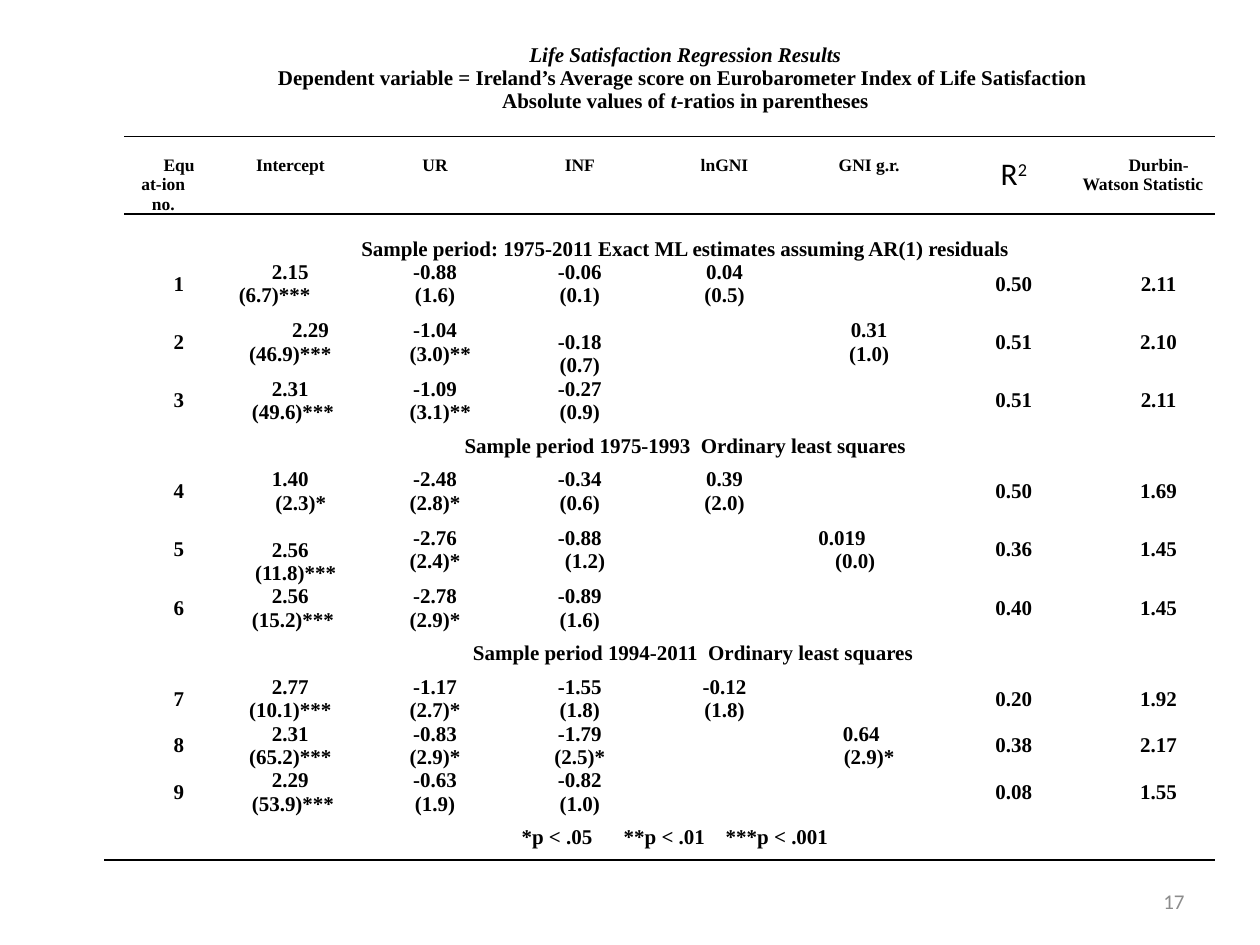
import dataclasses
import typing

import pptx
import pptx.dml.color
import pptx.enum.text
import pptx.oxml
import pptx.oxml.ns
import pptx.util

Pt = pptx.util.Pt
Align = pptx.enum.text.PP_ALIGN
Anchor = pptx.enum.text.MSO_ANCHOR
SERIF, SANS = "Times New Roman", "Calibri"
BLACK, GREY = "000000", "8C8C8C"
PLAIN = "{2D5ABB26-0587-4C30-8999-92F81FD0307C}"
INDENT = 18
WIDTHS = [11.5, 44.6] + [82.7] * 7
LAST = len(WIDTHS) - 1


@dataclasses.dataclass
class Look:
    size: float = 12
    font: str = SERIF
    bold: bool = True
    ital: bool = False
    tint: str = BLACK


@dataclasses.dataclass
class Band:
    row: int
    text: str
    drop: float = 0
    nudge: float = 0


@dataclasses.dataclass
class Model:
    row: int
    cells: typing.List[str]  # from column 1; "|" parts value and t-ratio


HEADS = ["Equat-ion no.", "Intercept", "UR", "INF", "lnGNI", "GNI g.r.",
         "R", "Durbin-Watson Statistic"]
BANDS = [
    Band(2, "Sample period: 1975-2011 Exact ML estimates assuming AR(1) residuals", drop=13.4),
    Band(6, "Sample period 1975-1993  Ordinary least squares"),
    Band(10, "Sample period 1994-2011  Ordinary least squares", nudge=9),
]
MODELS = [
    Model(3, ["1", "2.15\v(6.7)***", "-0.88|(1.6)", "-0.06|(0.1)", "0.04|(0.5)", "", "0.50", "2.11"]),
    Model(4, ["2", "2.29|(46.9)***", "-1.04|(3.0)**", "-0.18|(0.7)", "", "0.31|(1.0)", "0.51", "2.10"]),
    Model(5, ["3", "2.31|(49.6)***", "-1.09|(3.1)**", "-0.27|(0.9)", "", "", "0.51", "2.11"]),
    Model(7, ["4", "1.40|(2.3)*", "-2.48|(2.8)*", "-0.34|(0.6)", "0.39|(2.0)", "", "0.50", "1.69"]),
    Model(8, ["5", "2.56|(11.8)***", "-2.76|(2.4)*", "-0.88|(1.2)", "", "0.019|(0.0)", "0.36", "1.45"]),
    Model(9, ["6", "2.56|(15.2)***", "-2.78|(2.9)*", "-0.89|(1.6)", "", "", "0.40", "1.45"]),
    Model(11, ["7", "2.77|(10.1)***", "-1.17|(2.7)*", "-1.55|(1.8)", "-0.12|(1.8)", "", "0.20", "1.92"]),
    Model(12, ["8", "2.31|(65.2)***", "-0.83|(2.9)*", "-1.79|(2.5)*", "", "0.64|(2.9)*", "0.38", "2.17"]),
    Model(13, ["9", "2.29|(53.9)***", "-0.63|(1.9)", "-0.82|(1.0)", "", "", "0.08", "1.55"]),
]
# Extra first-line indent by (row, column), one number a line
NUDGES = {
    (4, 2): (23, 0), (4, 3): (0, 6), (5, 2): (0, 3), (5, 3): (0, 6),
    (7, 2): (0, 12), (8, 2): (0, 6), (8, 4): (0, 6), (8, 6): (-31, -16),
    (9, 2): (0, 3), (12, 6): (-9, 0), (13, 2): (0, 3),
}
# Cells set one line lower than their row
DROPS = {(4, 4): 13.4, (8, 2): 13.4}


def paint(run, look: Look) -> None:
    font = run.font
    font.size, font.name = Pt(look.size), look.font
    font.bold, font.italic = look.bold, look.ital
    font.color.rgb = pptx.dml.color.RGBColor.from_string(look.tint)


def fill(cell, text: str, look: Look, nudges: typing.Sequence[float] = (),
         drop: float = 0) -> None:
    """Write centred lines, each shifted by an indent or a right margin."""
    cell.text_frame.text = text.replace("|", "\n")
    cell.margin_top = Pt(drop)
    for i, para in enumerate(cell.text_frame.paragraphs):
        para.alignment = Align.CENTER
        shift = INDENT + (nudges[i] if i < len(nudges) else 0)
        props = para._p.get_or_add_pPr()
        props.set("marL", "0")
        props.set("marR", str(int(Pt(max(-shift, 0)))))
        props.set("indent", str(int(Pt(max(shift, 0)))))
        for run in para.runs:
            paint(run, look)


def rule(table, row: int, side: str, first: int = 1) -> None:
    space = pptx.oxml.ns.nsdecls("a")
    for col in range(first, LAST + 1):
        line = pptx.oxml.parse_xml(
            f'<a:ln{side} {space} w="12700"><a:solidFill>'
            f'<a:srgbClr val="{BLACK}"/></a:solidFill></a:ln{side}>')
        table.cell(row, col)._tc.get_or_add_tcPr().insert(0, line)


def grid(slide):
    frame = slide.shapes.add_table(15, len(WIDTHS), Pt(59.5), Pt(20.5), Pt(635), Pt(499))
    table = frame.table
    table.first_row = table.horz_banding = False
    table._tbl.tblPr.find(pptx.oxml.ns.qn("a:tableStyleId")).text = PLAIN
    for col, width in zip(table.columns, WIDTHS):
        col.width = Pt(width)
    for i, row in enumerate(table.rows):
        row.height = Pt(25.2 if i else 57.6)
        for cell in row.cells:
            cell.fill.background()
            cell.margin_left = cell.margin_right = Pt(3.6)
            cell.margin_top = cell.margin_bottom = 0
            cell.vertical_anchor = Anchor.MIDDLE
    return table


def title(table) -> None:
    cell = table.cell(0, 1)
    cell.merge(table.cell(0, LAST))
    fill(cell, "Life Satisfaction Regression Results|"
         "Dependent variable = Ireland’s Average score on Eurobarometer Index of Life Satisfaction |"
         "Absolute values of ", Look())
    cell.vertical_anchor = Anchor.BOTTOM
    cell.margin_bottom = Pt(13.4)
    paras = cell.text_frame.paragraphs
    paras[0].runs[0].font.italic = True
    for text, ital in (("t", True), ("-ratios in parentheses", False)):
        run = paras[2].add_run()
        run.text = text
        paint(run, Look(ital=ital))


def heads(table) -> None:
    for col, text in enumerate(HEADS, 1):
        cell = table.cell(1, col)
        look = Look(18, SANS, False) if text == "R" else Look(10)
        fill(cell, text, look, drop=11)
        cell.vertical_anchor = Anchor.TOP
        if text == "R":
            run = cell.text_frame.paragraphs[0].add_run()
            run.text = "2"
            paint(run, look)
            run._r.get_or_add_rPr().set("baseline", "30000")


def legend(table) -> None:
    cell = table.cell(14, 0)
    cell.merge(table.cell(14, LAST))
    para = cell.text_frame.paragraphs[0]
    para.text = "\t*p < .05\t**p < .01\t***p < .001"
    para.alignment = Align.LEFT
    stops = "".join(f'<a:tab pos="{int(Pt(235 + 58.3 * i))}" algn="l"/>' for i in range(3))
    para._p.get_or_add_pPr().append(pptx.oxml.parse_xml(
        f'<a:tabLst {pptx.oxml.ns.nsdecls("a")}>{stops}</a:tabLst>'))
    for run in para.runs:
        paint(run, Look())


def number(slide) -> None:
    box = slide.shapes.add_textbox(Pt(516), Pt(500.5), Pt(168), Pt(28.8))
    box.text_frame.word_wrap = True
    box.text_frame.vertical_anchor = Anchor.MIDDLE
    para = box.text_frame.paragraphs[0]
    para.text = "17"
    para.alignment = Align.RIGHT
    paint(para.runs[0], Look(12, SANS, False, tint=GREY))


def main() -> None:
    deck = pptx.Presentation()
    deck.slide_width, deck.slide_height = Pt(720), Pt(540)
    slide = deck.slides.add_slide(deck.slide_layouts[6])
    table = grid(slide)
    title(table)
    heads(table)
    # Sample periods
    for band in BANDS:
        cell = table.cell(band.row, 1)
        cell.merge(table.cell(band.row, LAST))
        fill(cell, band.text, Look(), (band.nudge,), band.drop)
    # Equations
    for model in MODELS:
        for col, text in enumerate(model.cells, 1):
            spot = (model.row, col)
            if text:
                fill(table.cell(*spot), text, Look(), NUDGES.get(spot, ()), DROPS.get(spot, 0))
    legend(table)
    # Rules: the lower edge goes in first, as the upper one must precede it
    for row, side in ((0, "B"), (1, "B"), (1, "T")):
        rule(table, row, side)
    rule(table, 14, "B", 0)
    number(slide)
    deck.save("out.pptx")


if __name__ == "__main__":
    main()
